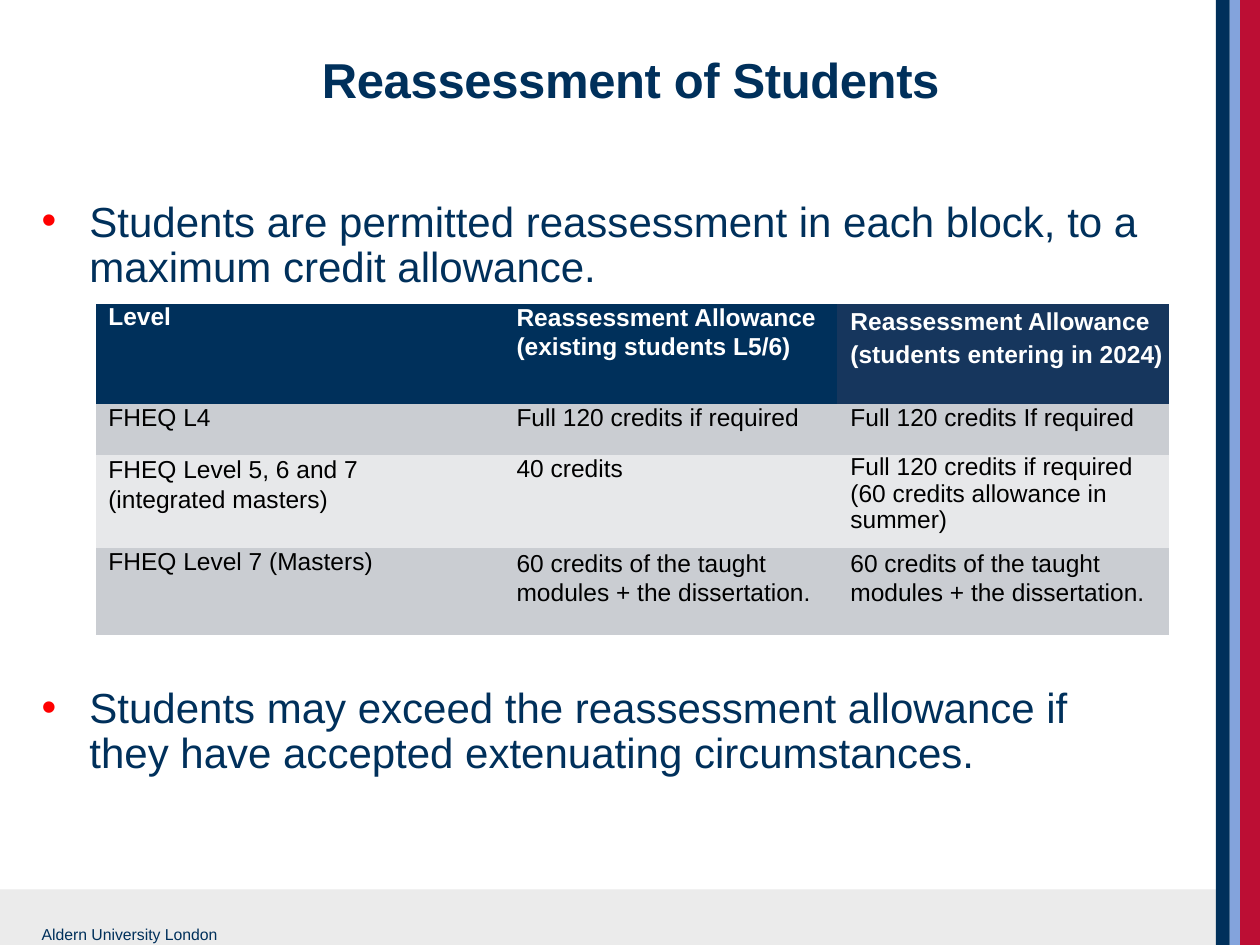
"""Build the slide on reassessment allowances for students."""
from dataclasses import dataclass
from typing import Any, Optional

import pptx
import pptx.dml.color
import pptx.enum.shapes
import pptx.enum.text
import pptx.oxml
import pptx.oxml.ns
import pptx.util

Inches = pptx.util.Inches
Pt = pptx.util.Pt
RGB = pptx.dml.color.RGBColor.from_string

COLOURS = {
    "navy": "00305B", "slate": "16365D", "sky": "83A3DC", "red": "BC0E34",
    "bullet": "FF0000", "pale": "EBEBEB", "band": "CACDD2", "light": "E7E8EA",
    "white": "FFFFFF", "black": "000000",
}
NO_GRID_STYLE = "{2D5ABB26-0587-4C30-8999-92F81FD0307C}"
FRAME_FORMAT = {
    "margin_left": 0, "margin_right": 0, "margin_top": 0, "margin_bottom": 0,
    "word_wrap": True,
    "auto_size": pptx.enum.text.MSO_AUTO_SIZE.NONE,
    "vertical_anchor": pptx.enum.text.MSO_ANCHOR.TOP,
}


@dataclass(frozen=True)
class Box:
    left: float
    top: float
    width: float
    height: float

    def lengths(self) -> tuple:
        return tuple(Inches(v) for v in (self.left, self.top, self.width, self.height))


@dataclass(frozen=True)
class Band:
    box: Box
    colour: str


@dataclass(frozen=True)
class Style:
    size: float
    colour: str
    bold: bool = False
    spacing: Any = None
    indent: float = 0
    hanging: float = 0
    bullet: Optional[str] = None
    tracking: int = 0


@dataclass(frozen=True)
class Passage:
    text: str
    box: Box
    style: Style


@dataclass(frozen=True)
class Entry:
    text: str
    spacing: Any = None
    fill: Optional[str] = None


BULLET_STYLE = Style(24, "navy", spacing=Pt(25.9), indent=0.39, hanging=0.38, bullet="•")
BANDS = [
    Band(Box(0, 7.06, 9.65, 0.44), "pale"),
    Band(Box(9.84, 0, 0.16, 7.5), "red"),
    Band(Box(9.76, 0, 0.08, 7.5), "sky"),
    Band(Box(9.65, 0, 0.11, 7.5), "navy"),
]
PASSAGES = [
    Passage("Aldern University London", Box(0.32, 7.34, 1.6, 0.15),
            Style(9, "navy", indent=0.01)),
    Passage("Students are permitted reassessment in each block, to a maximum credit allowance.",
            Box(0.32, 1.59, 8.87, 0.73), BULLET_STYLE),
    Passage("Students may exceed the reassessment allowance if they have accepted "
            "extenuating circumstances.", Box(0.32, 5.45, 8.87, 0.72), BULLET_STYLE),
]
MASTERS = Entry("60 credits of the taught modules + the dissertation.", Pt(16.8))
ALLOWANCES = [
    [Entry("Level"),
     Entry("Reassessment Allowance (existing students L5/6)", Pt(16.2)),
     Entry("Reassessment Allowance (students entering in 2024)", 1.18, "slate")],
    [Entry("FHEQ L4"), Entry("Full 120 credits if required"),
     Entry("Full 120 credits If required")],
    [Entry("FHEQ Level 5, 6 and 7 (integrated masters)", Pt(16.8)), Entry("40 credits"),
     Entry("Full 120 credits if required (60 credits allowance in summer)", 0.96)],
    [Entry("FHEQ Level 7 (Masters)"), MASTERS, MASTERS],
]
TABLE_BOX = Box(0.76, 2.41, 8.52, 2.63)
COLUMN_WIDTHS = [2.76, 3.12, 2.64]
COLUMN_INDENTS = [0.1, 0.58, 0.11]
ROW_HEIGHTS = [0.8, 0.4, 0.74, 0.69]
ROW_FILLS = ["navy", "band", "light", "band"]


def set_all(target: Any, values: dict) -> None:
    """Set every attribute in values on target."""
    for name, value in values.items():
        setattr(target, name, value)


def add_bullet(properties: Any, character: str) -> None:
    """Give a paragraph a coloured bullet."""
    namespace = pptx.oxml.ns.nsdecls("a")
    for xml in (
        f'<a:buClr {namespace}><a:srgbClr val="{COLOURS["bullet"]}"/></a:buClr>',
        f'<a:buFont {namespace} typeface="Arial"/>',
        f'<a:buChar {namespace} char="{character}"/>',
    ):
        properties.append(pptx.oxml.parse_xml(xml))


def write(frame: Any, text: str, style: Style) -> Any:
    """Write one styled paragraph and return it."""
    paragraph = frame.paragraphs[0]
    run = paragraph.add_run()
    run.text = text
    set_all(run.font, {"name": "Arial", "size": Pt(style.size), "bold": style.bold})
    run.font.color.rgb = RGB(COLOURS[style.colour])
    if style.tracking:
        run._r.get_or_add_rPr().set("spc", str(style.tracking))
    paragraph.line_spacing = style.spacing
    properties = paragraph._p.get_or_add_pPr()
    properties.set("marL", str(Inches(style.indent)))
    properties.set("indent", str(-Inches(style.hanging)))
    if style.bullet:
        add_bullet(properties, style.bullet)
    return paragraph


def draw_band(slide: Any, band: Band) -> None:
    """Draw one plain background band."""
    stripe = slide.shapes.add_shape(
        pptx.enum.shapes.MSO_SHAPE.RECTANGLE, *band.box.lengths())
    stripe.shadow.inherit = False
    stripe.fill.solid()
    stripe.fill.fore_color.rgb = RGB(COLOURS[band.colour])
    stripe.line.fill.background()


def draw_title(slide: Any) -> None:
    """Place and format the title."""
    title = slide.shapes.title
    names = ("left", "top", "width", "height")
    set_all(title, dict(zip(names, Box(0.32, 0.39, 9.36, 0.88).lengths())))
    set_all(title.text_frame, FRAME_FORMAT)
    heading = write(title.text_frame, "Reassessment of Students",
                    Style(28, "navy", bold=True, indent=0.01, tracking=-20))
    heading.alignment = pptx.enum.text.PP_ALIGN.CENTER


def draw_passage(slide: Any, passage: Passage) -> None:
    """Draw one text box."""
    frame = slide.shapes.add_textbox(*passage.box.lengths()).text_frame
    set_all(frame, FRAME_FORMAT)
    write(frame, passage.text, passage.style)


def draw_allowances(slide: Any) -> None:
    """Draw the table of credit allowances."""
    table = slide.shapes.add_table(
        len(ROW_HEIGHTS), len(COLUMN_WIDTHS), *TABLE_BOX.lengths()).table
    table.horz_banding = False
    table._tbl.tblPr.find(pptx.oxml.ns.qn("a:tableStyleId")).text = NO_GRID_STYLE
    for column, width in zip(table.columns, COLUMN_WIDTHS):
        column.width = Inches(width)
    for row, height in zip(table.rows, ROW_HEIGHTS):
        row.height = Inches(height)
    margins = {name: 0 for name in FRAME_FORMAT if name.startswith("margin")}
    for r, entries in enumerate(ALLOWANCES):
        for c, entry in enumerate(entries):
            cell = table.cell(r, c)
            set_all(cell, margins)
            cell.fill.solid()
            cell.fill.fore_color.rgb = RGB(COLOURS[entry.fill or ROW_FILLS[r]])
            write(cell.text_frame, entry.text,
                  Style(14, "black" if r else "white", bold=r == 0,
                        spacing=entry.spacing, indent=COLUMN_INDENTS[c]))


def main() -> None:
    """Build and save the presentation."""
    deck = pptx.Presentation()
    set_all(deck, {"slide_width": Inches(10), "slide_height": Inches(7.5)})
    slide = deck.slides.add_slide(deck.slide_layouts.get_by_name("Title Only"))
    for band in BANDS:
        draw_band(slide, band)
    draw_title(slide)
    for passage in PASSAGES:
        draw_passage(slide, passage)
    draw_allowances(slide)
    deck.save("out.pptx")


if __name__ == "__main__":
    main()
